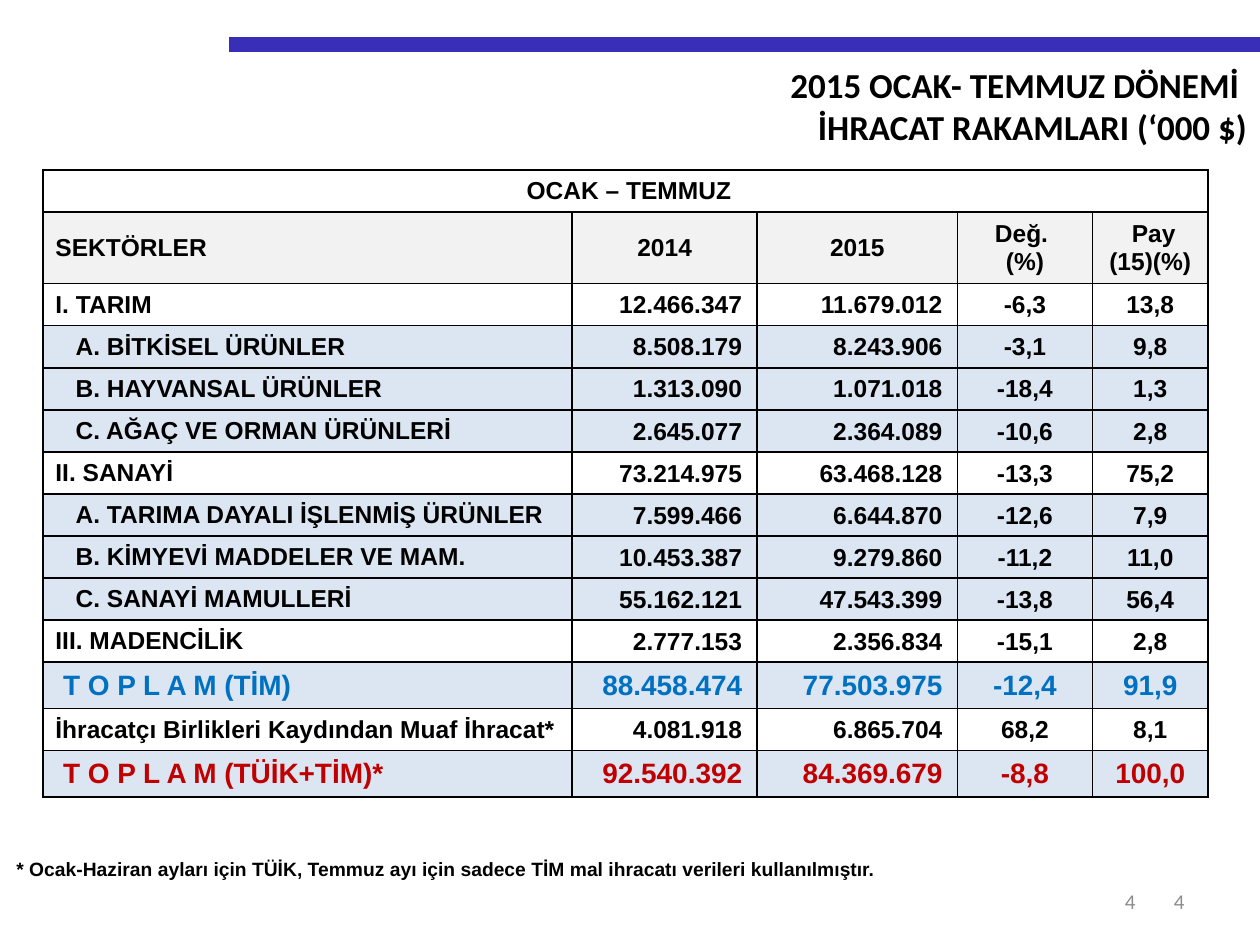
from dataclasses import dataclass
from pptx import Presentation, util as u
from pptx.dml.color import RGBColor
from pptx.enum import shapes, text
from pptx.oxml import parse_xml
from pptx.oxml.ns import nsdecls

SLIDE_WIDTH, SLIDE_HEIGHT = u.Inches(10), u.Inches(7.5)
BLACK = RGBColor(0x00, 0x00, 0x00)
GRAY = RGBColor(0x8C, 0x8C, 0x8C)
INDIGO = RGBColor(0x38, 0x2E, 0xB8)
HEADER_FILL = RGBColor(0xF2, 0xF2, 0xF2)
BAND_FILL = RGBColor(0xDC, 0xE6, 0xF2)
BLUE = RGBColor(0x00, 0x70, 0xC0)
RED = RGBColor(0xC0, 0x00, 0x00)
LEFT, CENTER, RIGHT = text.PP_ALIGN.LEFT, text.PP_ALIGN.CENTER, text.PP_ALIGN.RIGHT
COLUMN_SHARES = [42, 14.7, 15.9, 10.7, 9.2]
COLUMN_ALIGNS = [LEFT, RIGHT, RIGHT, CENTER, CENTER]


@dataclass
class Box:
    """Position and size in percent of the slide."""
    left: float
    top: float
    width: float
    height: float

    def lengths(self) -> tuple:
        return across(self.left), down(self.top), across(self.width), down(self.height)


@dataclass
class Style:
    size: float = 14
    color: RGBColor = BLACK
    bold: bool = True
    font: str = "Arial"


@dataclass
class Sector:
    values: list[str]
    indented: bool = False
    total_color: RGBColor | None = None


SECTORS = [
    Sector(["I. TARIM", "12.466.347", "11.679.012", "-6,3", "13,8"]),
    Sector(["A. BİTKİSEL ÜRÜNLER", "8.508.179", "8.243.906", "-3,1", "9,8"], True),
    Sector(["B. HAYVANSAL ÜRÜNLER", "1.313.090", "1.071.018", "-18,4", "1,3"], True),
    Sector(["C. AĞAÇ VE ORMAN ÜRÜNLERİ", "2.645.077", "2.364.089", "-10,6", "2,8"], True),
    Sector(["II. SANAYİ", "73.214.975", "63.468.128", "-13,3", "75,2"]),
    Sector(["A. TARIMA DAYALI İŞLENMİŞ ÜRÜNLER", "7.599.466", "6.644.870", "-12,6", "7,9"], True),
    Sector(["B. KİMYEVİ MADDELER VE MAM.", "10.453.387", "9.279.860", "-11,2", "11,0"], True),
    Sector(["C. SANAYİ MAMULLERİ", "55.162.121", "47.543.399", "-13,8", "56,4"], True),
    Sector(["III. MADENCİLİK", "2.777.153", "2.356.834", "-15,1", "2,8"]),
    Sector([" T O P L A M (TİM)", "88.458.474", "77.503.975", "-12,4", "91,9"], total_color=BLUE),
    Sector(["İhracatçı Birlikleri Kaydından Muaf İhracat*", "4.081.918", "6.865.704", "68,2", "8,1"]),
    Sector([" T O P L A M (TÜİK+TİM)*", "92.540.392", "84.369.679", "-8,8", "100,0"], total_color=RED),
]


def across(percent: float) -> int:
    return round(SLIDE_WIDTH * percent / 100)


def down(percent: float) -> int:
    return round(SLIDE_HEIGHT * percent / 100)


def write(frame, content: str, align, style: Style) -> None:
    frame.text = content
    for paragraph in frame.paragraphs:
        paragraph.alignment = align
        font = paragraph.font
        font.size, font.bold, font.name = u.Pt(style.size), style.bold, style.font
        font.color.rgb = style.color


def set_margins(cell, left: float, top: float, right: float, bottom: float) -> None:
    cell.margin_left, cell.margin_top = u.Inches(left), u.Inches(top)
    cell.margin_right, cell.margin_bottom = u.Inches(right), u.Inches(bottom)


def fill_cell(cell, content: str, align, style: Style, fill: RGBColor | None = None) -> None:
    write(cell.text_frame, content, align, style)
    cell.vertical_anchor = text.MSO_ANCHOR.MIDDLE
    if fill is None:
        cell.fill.background()
    else:
        cell.fill.solid()
        cell.fill.fore_color.rgb = fill


def add_borders(cell) -> None:
    properties = cell._tc.get_or_add_tcPr()
    for position, side in enumerate(("lnL", "lnR", "lnT", "lnB")):
        properties.insert(position, parse_xml(
            f'<a:{side} {nsdecls("a")} w="12700"><a:solidFill>'
            f'<a:srgbClr val="{BLACK}"/></a:solidFill></a:{side}>'))


def add_plain_table(slide, box: Box, columns: list[float], rows: list[float]):
    shape = slide.shapes.add_table(len(rows), len(columns), *box.lengths())
    table = shape.table
    table.first_row = table.horz_banding = False
    for column, share in zip(table.columns, columns):
        column.width = across(share)
    for row, share in zip(table.rows, rows):
        row.height = down(share)
    shape.height = down(box.height)
    return table


def add_export_table(slide) -> None:
    rows = [4, 6.93] + [4.4 if sector.total_color else 4 for sector in SECTORS]
    table = add_plain_table(slide, Box(3.4, 18, 92.5, 66.27), COLUMN_SHARES, rows)
    table.cell(0, 0).merge(table.cell(0, len(COLUMN_SHARES) - 1))
    fill_cell(table.cell(0, 0), " OCAK – TEMMUZ", CENTER, Style())
    headers = ["SEKTÖRLER", "2014", "2015", "Değ. \n(%)", " Pay\n(15)(%)"]
    for column, header in enumerate(headers):
        fill_cell(table.cell(1, column), header, CENTER if column else LEFT, Style(), HEADER_FILL)
    for row, sector in enumerate(SECTORS, start=2):
        style = Style(16, sector.total_color) if sector.total_color else Style()
        fill = BAND_FILL if sector.indented or sector.total_color else None
        for column, (value, align) in enumerate(zip(sector.values, COLUMN_ALIGNS)):
            cell = table.cell(row, column)
            fill_cell(cell, value, align, style, fill)
            if column:
                set_margins(cell, 0.01, 0.01, 0.12 if align == RIGHT else 0.01, 0)
            elif sector.indented:
                cell.margin_left = u.Inches(0.26)
    for cell in table.iter_cells():
        add_borders(cell)


def add_footnote(slide) -> None:
    table = add_plain_table(slide, Box(1.2, 89.87, 74, 4.13), [74], [4.13])
    cell = table.cell(0, 0)
    fill_cell(cell, "* Ocak-Haziran ayları için TÜİK, Temmuz ayı için sadece TİM mal ihracatı "
              "verileri kullanılmıştır.", LEFT, Style(11))
    set_margins(cell, 0.01, 0.01, 0.01, 0)


def add_page_number(slide, box: Box) -> None:
    frame = slide.shapes.add_textbox(*box.lengths()).text_frame
    frame.word_wrap = True
    frame.vertical_anchor = text.MSO_ANCHOR.MIDDLE
    write(frame, "4", RIGHT, Style(12, GRAY, False, "Calibri"))


def add_top_rule(slide) -> None:
    rule = slide.shapes.add_connector(
        shapes.MSO_CONNECTOR.STRAIGHT, across(18.2), down(4.67), across(100), down(4.67))
    rule.line.color.rgb = INDIGO
    rule.line.width = u.Pt(8.5)
    rule._element.spPr.append(parse_xml(f'<a:effectLst {nsdecls("a")}/>'))


def set_title(slide) -> None:
    title = slide.shapes.title
    title.left, title.top, title.width, title.height = Box(10.6, 6, 89.4, 10.27).lengths()
    frame = title.text_frame
    frame.word_wrap = True
    frame.auto_size = text.MSO_AUTO_SIZE.NONE
    frame.vertical_anchor = text.MSO_ANCHOR.TOP
    write(frame, "2015 OCAK- TEMMUZ DÖNEMİ \nİHRACAT RAKAMLARI (‘000 $)", RIGHT,
          Style(20, font="Calibri"))


def main() -> None:
    presentation = Presentation()
    presentation.slide_width, presentation.slide_height = SLIDE_WIDTH, SLIDE_HEIGHT
    slide = presentation.slides.add_slide(presentation.slide_layouts[5])
    add_top_rule(slide)
    for left, width in ((71.7, 23.3), (70.1, 21)):
        add_page_number(slide, Box(left, 92.67, width, 5.33))
    set_title(slide)
    add_export_table(slide)
    add_footnote(slide)
    presentation.save("out.pptx")


if __name__ == "__main__":
    main()
